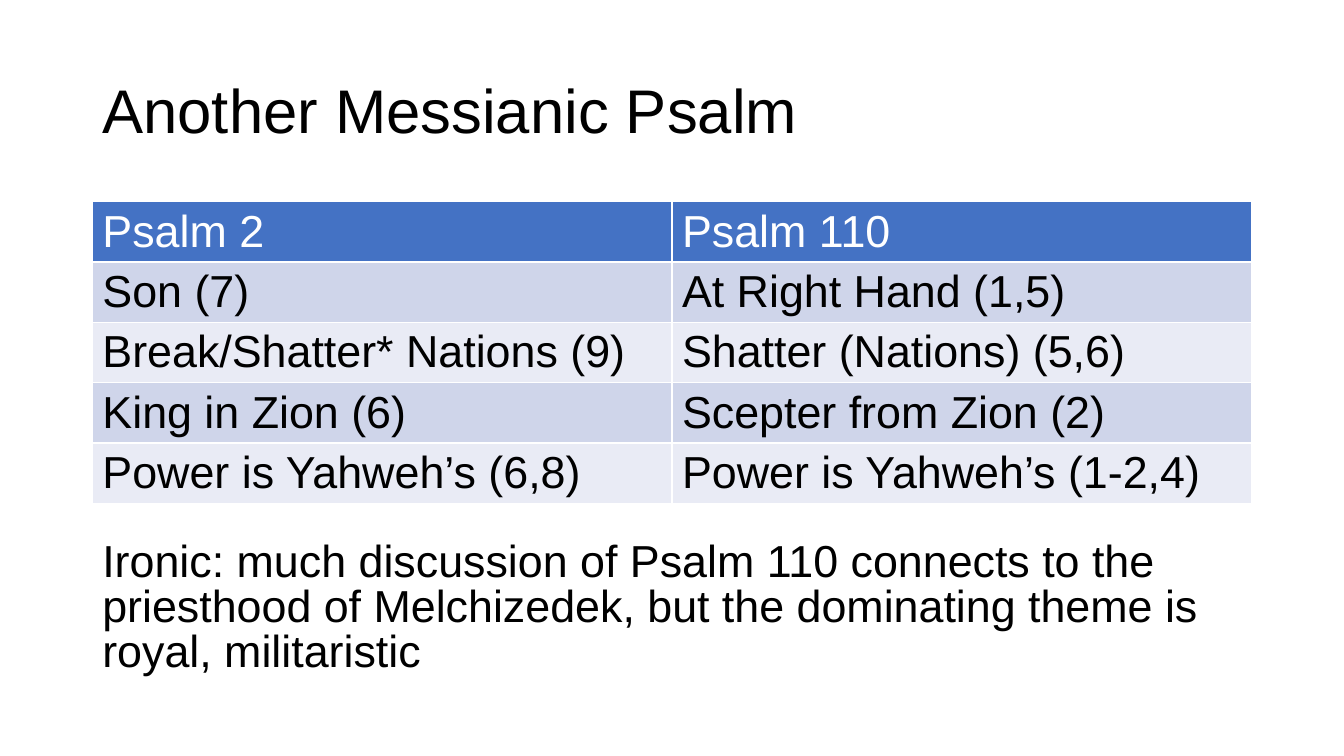
"""Build a slide comparing Psalm 2 with Psalm 110."""
from pptx import Presentation
from pptx.dml.color import RGBColor
from pptx.enum.text import MSO_ANCHOR, MSO_AUTO_SIZE, PP_ALIGN
from pptx.util import Pt

TITLE = "Another Messianic Psalm"
PSALM_ROWS = [
    ("Psalm 2", "Psalm 110"),
    ("Son (7)", "At Right Hand (1,5)"),
    ("Break/Shatter* Nations (9)", "Shatter (Nations) (5,6)"),
    ("King in Zion (6)", "Scepter from Zion (2)"),
    ("Power is Yahweh’s (6,8)", "Power is Yahweh’s (1-2,4)"),
]
REMARK = ("Ironic: much discussion of Psalm 110 connects to the priesthood of "
          "Melchizedek, but the dominating theme is royal, militaristic")

BLACK = RGBColor(0x00, 0x00, 0x00)
WHITE = RGBColor(0xFF, 0xFF, 0xFF)
HEADER_BLUE = RGBColor(0x44, 0x72, 0xC4)
BANDS = [RGBColor(0xE9, 0xEB, 0xF5), RGBColor(0xCF, 0xD5, 0xEA)]

LEFT, WIDTH = Pt(66), Pt(828)
TITLE_TOP, TITLE_HEIGHT = Pt(28.75), Pt(104.4)
TABLE_TOP, ROW_HEIGHT = Pt(144), Pt(42.8)
REMARK_TOP, REMARK_HEIGHT = Pt(383.75), Pt(102.25)


def apply_format(target, values):
    for name, value in values.items():
        setattr(target, name, value)


def write(frame, text, size, color, **paragraph_format):
    frame.text = text
    paragraph = frame.paragraphs[0]
    apply_format(paragraph, {"alignment": PP_ALIGN.LEFT, **paragraph_format})
    font = paragraph.runs[0].font
    apply_format(font, {"name": "Arial", "size": Pt(size), "bold": False})
    font.color.rgb = color


def add_title(slide):
    title = slide.shapes.title
    apply_format(title, {"left": LEFT, "top": TITLE_TOP,
                         "width": WIDTH, "height": TITLE_HEIGHT})
    apply_format(title.text_frame, {"vertical_anchor": MSO_ANCHOR.MIDDLE,
                                    "auto_size": MSO_AUTO_SIZE.NONE})
    write(title.text_frame, TITLE, 44, BLACK, line_spacing=0.9)


def add_psalm_table(slide):
    row_count, column_count = len(PSALM_ROWS), len(PSALM_ROWS[0])
    table = slide.shapes.add_table(row_count, column_count, LEFT, TABLE_TOP,
                                   WIDTH, ROW_HEIGHT * row_count).table
    for row, texts in enumerate(PSALM_ROWS):
        for column, text in enumerate(texts):
            cell = table.cell(row, column)
            cell.fill.solid()
            cell.fill.fore_color.rgb = BANDS[row % 2] if row else HEADER_BLUE
            write(cell.text_frame, text, 32, BLACK if row else WHITE)


def add_remark(slide):
    frame = slide.shapes.add_textbox(LEFT, REMARK_TOP, WIDTH, REMARK_HEIGHT).text_frame
    frame.word_wrap = True
    write(frame, REMARK, 32, BLACK, line_spacing=0.83, space_before=Pt(10))


def main():
    presentation = Presentation()
    apply_format(presentation, {"slide_width": Pt(960), "slide_height": Pt(540)})
    slide = presentation.slides.add_slide(presentation.slide_layouts[5])
    add_title(slide)
    add_psalm_table(slide)
    add_remark(slide)
    presentation.save("out.pptx")


if __name__ == "__main__":
    main()
